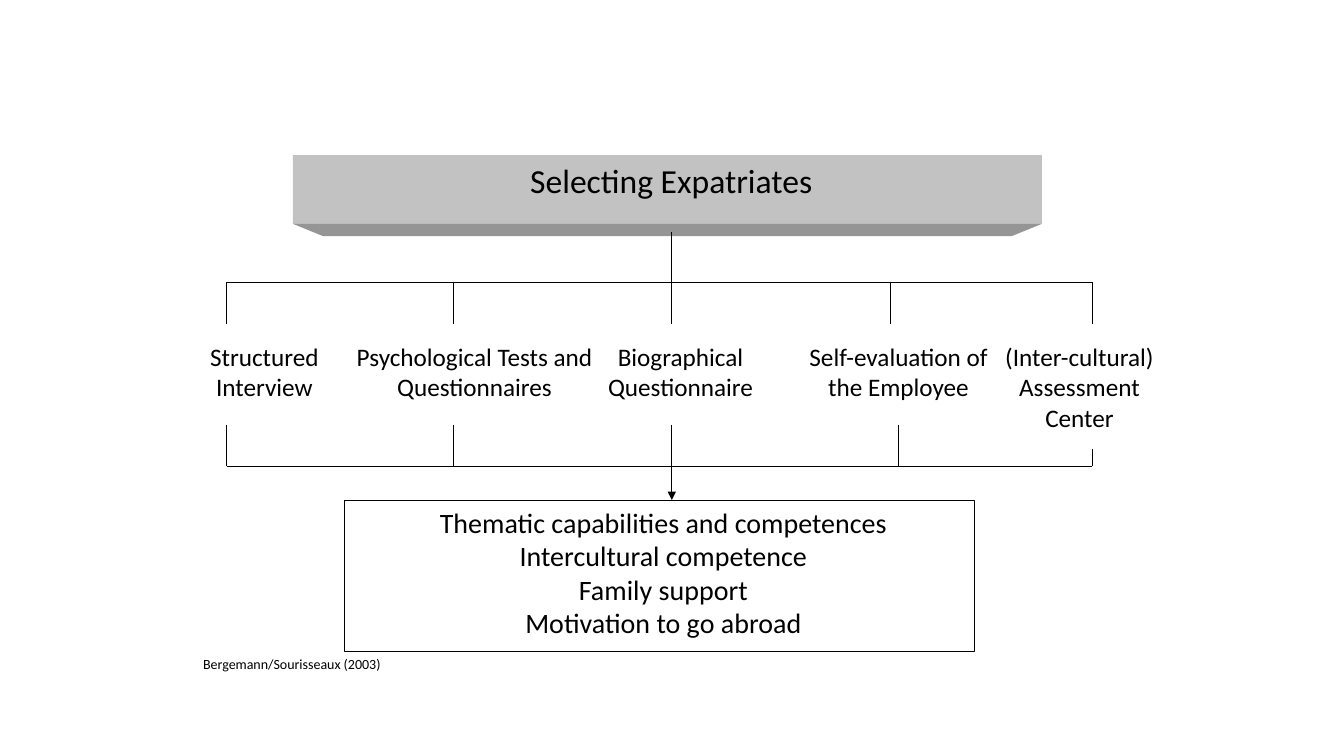
from lxml.etree import SubElement
from pptx import Presentation
from pptx.dml.color import RGBColor
from pptx.enum.shapes import MSO_CONNECTOR
from pptx.enum.text import MSO_ANCHOR, MSO_AUTO_SIZE, PP_ALIGN
from pptx.oxml.ns import qn
from pptx.util import Cm, Pt

FONT = "Calibri"
BLACK, FACE, EDGE = "000000", "C2C2C2", "959595"
TITLE = "Selecting Expatriates"
GOALS = [
    "Thematic capabilities and competences",
    "Intercultural competence",
    "Family support",
    "Motivation to go abroad",
]
CITE = "Bergemann/Sourisseaux (2003)"

# text, label left, label width, upper line x, lower line x, lower line start
TOOLS = [
    ("Structured Interview", 4.23, 4.87, 5.72, 5.72, 10.7),
    ("Psychological Tests and Questionnaires", 8.68, 6.56, 11.43, 11.43, 10.7),
    ("Biographical Questionnaire", 14.4, 5.5, 16.93, 16.93, 10.7),
    ("Self-evaluation of the Employee", 19.68, 5.93, 22.44, 22.65, 10.7),
    ("(Inter-cultural) Assessment Center", 24.77, 4.87, 27.52, 27.52, 11.32),
]
BANNER = (7.38, 3.91, 18.88, 1.73)
GOAL_BOX = (8.68, 12.6, 15.88, 3.81)
BEVEL, SLANT = 0.31, 0.76
RAIL_TOP, DROP_END, LABEL_TOP, RAIL_LOW = 7.11, 8.16, 8.48, 11.75
STEM_TOP = 5.84


def color(code):
    return RGBColor.from_string(code)


def place(shape, left, top, width, height):
    shape.left, shape.top = Cm(left), Cm(top)
    shape.width, shape.height = Cm(width), Cm(height)


def write(shape, lines, size, align=PP_ALIGN.CENTER, inset=0.25):
    frame = shape.text_frame
    frame.word_wrap = True
    frame.auto_size = MSO_AUTO_SIZE.NONE
    frame.vertical_anchor = MSO_ANCHOR.TOP
    frame.margin_left = Cm(inset)
    frame.text = "\n".join(lines)
    for para in frame.paragraphs:
        props = para._p.get_or_add_pPr()
        props.set("marL", "0")
        props.set("indent", "0")
        SubElement(props, qn("a:buNone"))
        para.alignment = align
        para.space_before = Pt(0)
        para.font.name = FONT
        para.font.size = Pt(size)
        para.font.color.rgb = color(BLACK)


def label(text, left, top, width, height, size, align=PP_ALIGN.CENTER):
    box = slide.shapes.add_textbox(Cm(left), Cm(top), Cm(width), Cm(height))
    write(box, [text], size, align)


def link(x1, y1, x2, y2, arrow=False):
    line = slide.shapes.add_connector(
        MSO_CONNECTOR.STRAIGHT, Cm(x1), Cm(y1), Cm(x2), Cm(y2))
    line.line.color.rgb = color(BLACK)
    line.line.width = Pt(0.75)
    if arrow:
        SubElement(line.line._get_or_add_ln(), qn("a:tailEnd"), type="triangle")
    SubElement(line._element.spPr, qn("a:effectLst"))


deck = Presentation()
deck.slide_width, deck.slide_height = Cm(33.87), Cm(19.05)
slide = deck.slides.add_slide(deck.slide_layouts[1])

title = slide.shapes.title
place(title, *BANNER)
title.fill.solid()
title.fill.fore_color.rgb = color(FACE)
write(title, [TITLE], 24, inset=0.45)

left, top, width, height = BANNER
right, base = left + width, top + height
pen = slide.shapes.build_freeform(Cm(left), Cm(base))
pen.add_line_segments([
    (Cm(right), Cm(base)),
    (Cm(right - SLANT), Cm(base + BEVEL)),
    (Cm(left + SLANT), Cm(base + BEVEL)),
])
bevel = pen.convert_to_shape()
bevel.shadow.inherit = False
bevel.fill.solid()
bevel.fill.fore_color.rgb = color(EDGE)
bevel.line.fill.background()

goals = slide.placeholders[1]
place(goals, *GOAL_BOX)
goals.line.color.rgb = color(BLACK)
goals.line.width = Pt(0.75)
write(goals, GOALS, 20, inset=0.45)

first, last = TOOLS[0][3], TOOLS[-1][3]
for rail in (RAIL_TOP, RAIL_LOW):
    link(first, rail, last, rail)

for rank, (text, left, width, high, low, start) in enumerate(TOOLS):
    stem = rank == len(TOOLS) // 2
    label(text, left, LABEL_TOP, width, 1.8, 18)
    link(high, STEM_TOP if stem else RAIL_TOP, high, DROP_END)
    link(low, start, low, GOAL_BOX[1] if stem else RAIL_LOW, stem)

label(CITE, 4.87, 16.4, 24.77, 0.69, 10, PP_ALIGN.LEFT)

deck.save("out.pptx")
